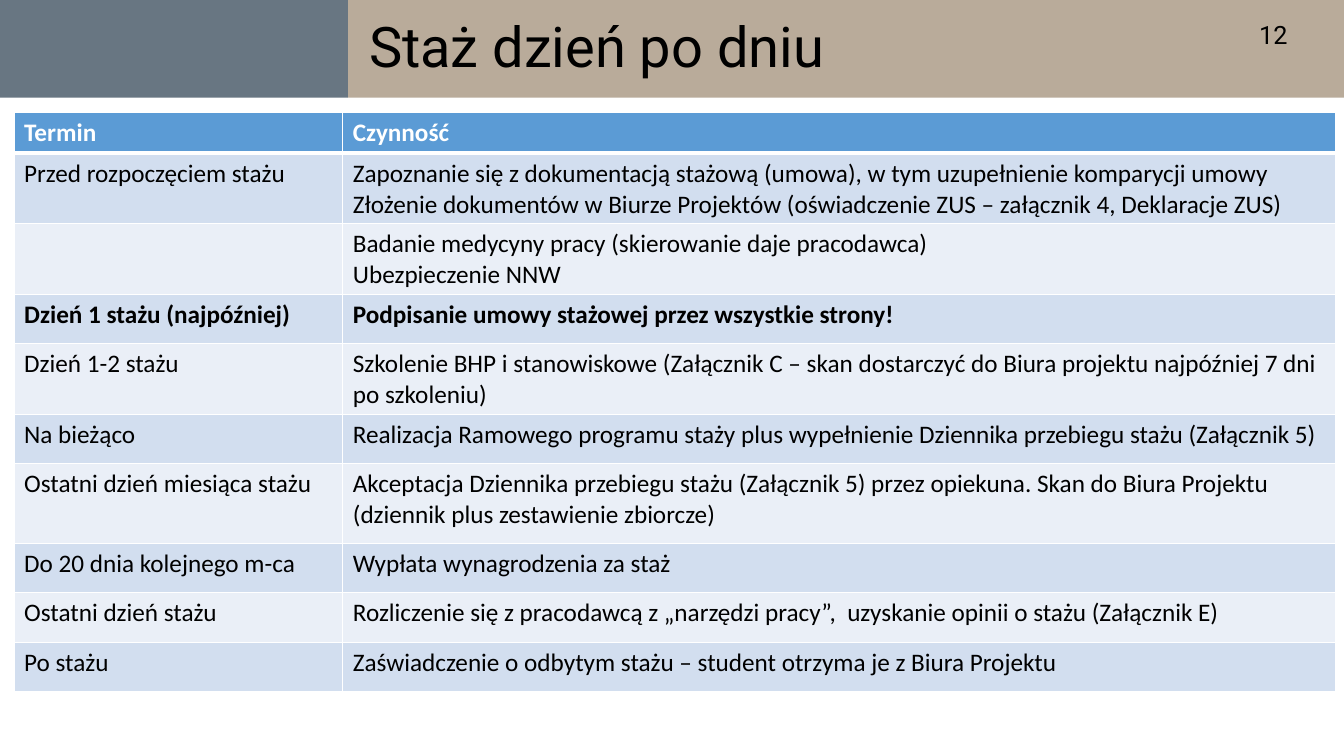
import pptx
import pptx.util
import pptx.dml.color
import pptx.enum.shapes
import pptx.enum.text
import pptx.oxml
import pptx.oxml.ns

Inches, Pt = pptx.util.Inches, pptx.util.Pt
Anchor = pptx.enum.text.MSO_ANCHOR

TITLE = "Staż dzień po dniu"
NUMBER = "12"
BANDS = [(0, 3.45, "687682"), (3.45, 9.88, "B9AB9A")]
BAND_H = 0.97
COLS = [3.26, 9.85]
HEAD, ODD, EVEN = "5B9BD5", "D2DEEF", "EAEFF7"
BOLD_ROWS = (0, 3)
# Row height, then one list of paragraphs for each cell
ROWS = [
    (0.4, ["Termin"], ["Czynność"]),
    (0.7, ["Przed rozpoczęciem stażu"], [
        "Zapoznanie się z dokumentacją stażową (umowa), w tym uzupełnienie komparycji umowy",
        "Złożenie dokumentów w Biurze Projektów (oświadczenie ZUS – załącznik 4, Deklaracje ZUS)"]),
    (0.7, [], ["Badanie medycyny pracy (skierowanie daje pracodawca)",
               "Ubezpieczenie NNW"]),
    (0.49, ["Dzień 1 stażu (najpóźniej)"],
     ["Podpisanie umowy stażowej przez wszystkie strony!"]),
    (0.7, ["Dzień 1-2 stażu"],
     ["Szkolenie BHP i stanowiskowe (Załącznik C – skan dostarczyć do Biura projektu "
      "najpóźniej 7 dni po szkoleniu)"]),
    (0.49, ["Na bieżąco"],
     ["Realizacja Ramowego programu staży plus wypełnienie Dziennika przebiegu stażu (Załącznik 5)"]),
    (0.79, ["Ostatni dzień miesiąca stażu"],
     ["Akceptacja Dziennika przebiegu stażu (Załącznik 5) przez opiekuna. Skan do Biura Projektu "
      "(dziennik plus zestawienie zbiorcze)"]),
    (0.49, ["Do 20 dnia kolejnego m-ca"], ["Wypłata wynagrodzenia za staż"]),
    (0.49, ["Ostatni dzień stażu"],
     ["Rozliczenie się z pracodawcą z „narzędzi pracy”,  uzyskanie opinii o stażu (Załącznik E)"]),
    (0.49, ["Po stażu"],
     ["Zaświadczenie o odbytym stażu – student otrzyma je z Biura Projektu"]),
]


def color(code):
    return pptx.dml.color.RGBColor.from_string(code)


def write(frame, lines, size=18, font="Calibri", ink="000000", bold=False,
          anchor=Anchor.TOP, spacing=None):
    frame.word_wrap = True
    for i, line in enumerate(lines):
        para = frame.add_paragraph() if i else frame.paragraphs[0]
        para.alignment = pptx.enum.text.PP_ALIGN.LEFT
        para.line_spacing = spacing
        run = para.add_run()
        run.text = line
        run.font.size, run.font.name, run.font.bold = Pt(size), font, bold
        run.font.color.rgb = color(ink)
    if hasattr(frame, "vertical_anchor"):
        frame.vertical_anchor = anchor


def edge(cell, widths):
    """Give the cell white borders: left, right, top, bottom in points."""
    props = cell._tc.get_or_add_tcPr()
    for i, (side, width) in enumerate(zip("LRTB", widths)):
        props.insert(i, pptx.oxml.parse_xml(
            f'<a:ln{side} {pptx.oxml.ns.nsdecls("a")} w="{Pt(width)}"><a:solidFill>'
            f'<a:srgbClr val="FFFFFF"/></a:solidFill></a:ln{side}>'))


def main():
    prs = pptx.Presentation()
    prs.slide_width, prs.slide_height = Inches(13.33), Inches(7.5)
    slide = prs.slides.add_slide(prs.slide_layouts[5])
    shapes = slide.shapes

    for left, width, fill in BANDS:
        band = shapes.add_shape(pptx.enum.shapes.MSO_SHAPE.RECTANGLE,
                                Inches(left), 0, Inches(width), Inches(BAND_H))
        band.shadow.inherit = False
        band.fill.solid()
        band.fill.fore_color.rgb = color(fill)
        band.line.fill.background()
        shapes._spTree.insert(2, band._element)

    title = shapes.title
    title.left, title.top = Inches(3.56), Inches(0.14)
    title.width, title.height = Inches(8.72), Inches(0.7)
    write(title.text_frame, [TITLE], size=40, font="Roboto",
          anchor=Anchor.MIDDLE, spacing=0.9)
    box = shapes.add_textbox(Inches(12.39), Inches(0.14), Inches(0.73), Inches(0.7))
    write(box.text_frame, [NUMBER], font="Roboto")

    table = shapes.add_table(
        len(ROWS), len(COLS), Inches(0.14), Inches(1.12),
        Inches(sum(COLS)), Inches(sum(row[0] for row in ROWS))).table
    for col, width in zip(table.columns, COLS):
        col.width = Inches(width)
    for r, (height, *texts) in enumerate(ROWS):
        table.rows[r].height = Inches(height)
        for c, lines in enumerate(texts):
            cell = table.cell(r, c)
            cell.fill.solid()
            cell.fill.fore_color.rgb = color(HEAD if r == 0 else ODD if r % 2 else EVEN)
            edge(cell, (1, 1, 3 if r == 1 else 1, 3 if r == 0 else 1))
            write(cell.text_frame, lines, bold=r in BOLD_ROWS,
                  ink="000000" if r else "FFFFFF")

    prs.save("out.pptx")


if __name__ == "__main__":
    main()
